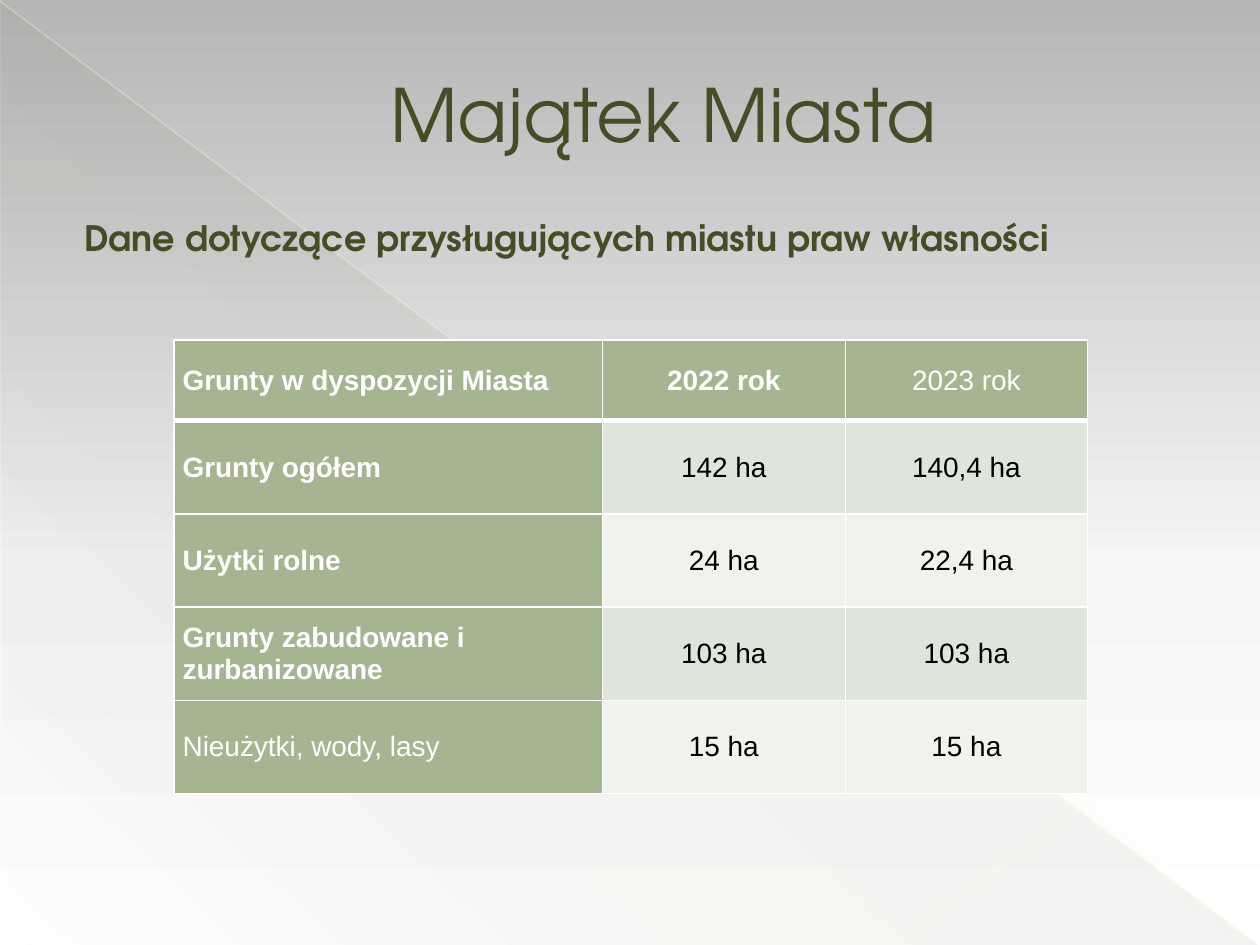
"""Build a slide with a table of the land that a town owns."""
from lxml import etree
from pptx import Presentation
from pptx.dml.color import RGBColor
from pptx.enum.shapes import MSO_CONNECTOR, MSO_SHAPE
from pptx.enum.text import MSO_ANCHOR, PP_ALIGN
from pptx.oxml import parse_xml
from pptx.oxml.ns import nsdecls, qn
from pptx.util import Inches, Pt


def style(font, color, **values):
    font.color.rgb = RGBColor.from_string(color)
    for key, value in values.items():
        setattr(font, key, value)


def blend(fill, root, stops, angle):
    fill.solid()
    old = root.find(".//" + qn("a:solidFill"))
    marks = "".join(
        f'<a:gs pos="{pos * 1000}"><a:srgbClr val="{color}">'
        f'<a:alpha val="{alpha * 1000}"/></a:srgbClr></a:gs>'
        for pos, color, alpha in stops
    )
    new = parse_xml(
        f'<a:gradFill {nsdecls("a")} rotWithShape="1"><a:gsLst>{marks}</a:gsLst>'
        f'<a:lin ang="{angle * 60000}" scaled="0"/></a:gradFill>'
    )
    old.getparent().replace(old, new)


OLIVE, SAGE, WHITE, BLACK = "444D26", "A5B592", "FFFFFF", "000000"
BANDS = ["E0E5DB", "F0F2EE"]
HEAD = "TeX Gyre Adventor"

deck = Presentation()
deck.slide_width, deck.slide_height = Inches(10), Inches(7.5)
slide = deck.slides.add_slide(deck.slide_layouts[5])
shapes = slide.shapes
blend(slide.background.fill, slide.element,
      [(0, "B6B6B6", 100), (60, "F5F5F5", 100), (100, WHITE, 100)], 90)

wedge = shapes.add_shape(MSO_SHAPE.RIGHT_TRIANGLE, Inches(0.01), Inches(0.02),
                         Inches(9.98), Inches(7.48))
wedge.shadow.inherit = False
wedge.line.fill.background()
blend(wedge.fill, wedge.element,
      [(0, OLIVE, 7), (70, OLIVE, 5), (100, OLIVE, 0)], 133)

for ends, color, alpha in [((0, 0.01, 9.99, 7.49), "FFFFD5", 33),
                           ((10, 5.41, 7.07, 7.49), "FFFFD9", 42)]:
    ray = shapes.add_connector(MSO_CONNECTOR.STRAIGHT, *map(Inches, ends))
    ray.line.width = Pt(0.75)
    ray.line.color.rgb = RGBColor.from_string(color)
    props = ray.element.spPr
    tint = props.find(".//" + qn("a:srgbClr"))
    etree.SubElement(tint, qn("a:alpha")).set("val", str(alpha * 1000))
    etree.SubElement(props, qn("a:effectLst"))

lead = shapes.add_textbox(Inches(0.5), Inches(1.67), Inches(9), Inches(0.6))
lead.text_frame.word_wrap = True
title = shapes.title
title.left, title.top = Inches(0.5), Inches(0.29)
title.width, title.height = Inches(9), Inches(1.21)
title.text_frame.vertical_anchor = MSO_ANCHOR.MIDDLE
title.element.getparent().append(title.element)

for box, text, size, bold, align, indent in [
    (lead, "Dane dotyczące przysługujących miastu praw własności",
     20, True, PP_ALIGN.LEFT, 0.07),
    (title, "Majątek Miasta", 42, False, PP_ALIGN.CENTER, 0.53),
]:
    para = box.text_frame.paragraphs[0]
    para.text, para.alignment = text, align
    para._p.get_or_add_pPr().set("marL", str(Inches(indent)))
    style(para.runs[0].font, OLIVE, name=HEAD, size=Pt(size), bold=bold)

rows = [
    ("Grunty w dyspozycji Miasta", "2022 rok", "2023 rok"),
    ("Grunty ogółem", "142 ha", "140,4 ha"),
    ("Użytki rolne", "24 ha", "22,4 ha"),
    ("Grunty zabudowane i zurbanizowane", "103 ha", "103 ha"),
    ("Nieużytki, wody, lasy", "15 ha", "15 ha"),
]
plain = {"2023 rok", "Nieużytki, wody, lasy"}
table = shapes.add_table(len(rows), 3, Inches(1.38), Inches(2.7),
                         Inches(7.25), Inches(3.6)).table
for col, width in zip(table.columns, [3.4, 1.93, 1.92]):
    col.width = Inches(width)

for r, row in enumerate(rows):
    table.rows[r].height = Inches(0.74 if r else 0.64)
    for c, text in enumerate(row):
        cell = table.cell(r, c)
        label = r == 0 or c == 0
        layout = {"margin_left": Inches(0.07), "margin_right": Inches(0.07),
                  "margin_top": 0, "margin_bottom": 0,
                  "vertical_anchor": MSO_ANCHOR.MIDDLE}
        for key, value in layout.items():
            setattr(cell, key, value)
        for side in "LRTB":
            thick = (r, side) in [(0, "B"), (1, "T")]
            cell._tc.get_or_add_tcPr().append(parse_xml(
                f'<a:ln{side} {nsdecls("a")} w="{Pt(3 if thick else 1)}"><a:solidFill>'
                f'<a:srgbClr val="{WHITE}"/></a:solidFill></a:ln{side}>'))
        cell.fill.solid()
        shade = SAGE if label else BANDS[(r - 1) % 2]
        cell.fill.fore_color.rgb = RGBColor.from_string(shade)
        para = cell.text_frame.paragraphs[0]
        para.text = text
        para.alignment = PP_ALIGN.CENTER if c else PP_ALIGN.LEFT
        style(para.runs[0].font, WHITE if label else BLACK, name="Arial",
              size=Pt(16), bold=label and text not in plain)

deck.save("out.pptx")
